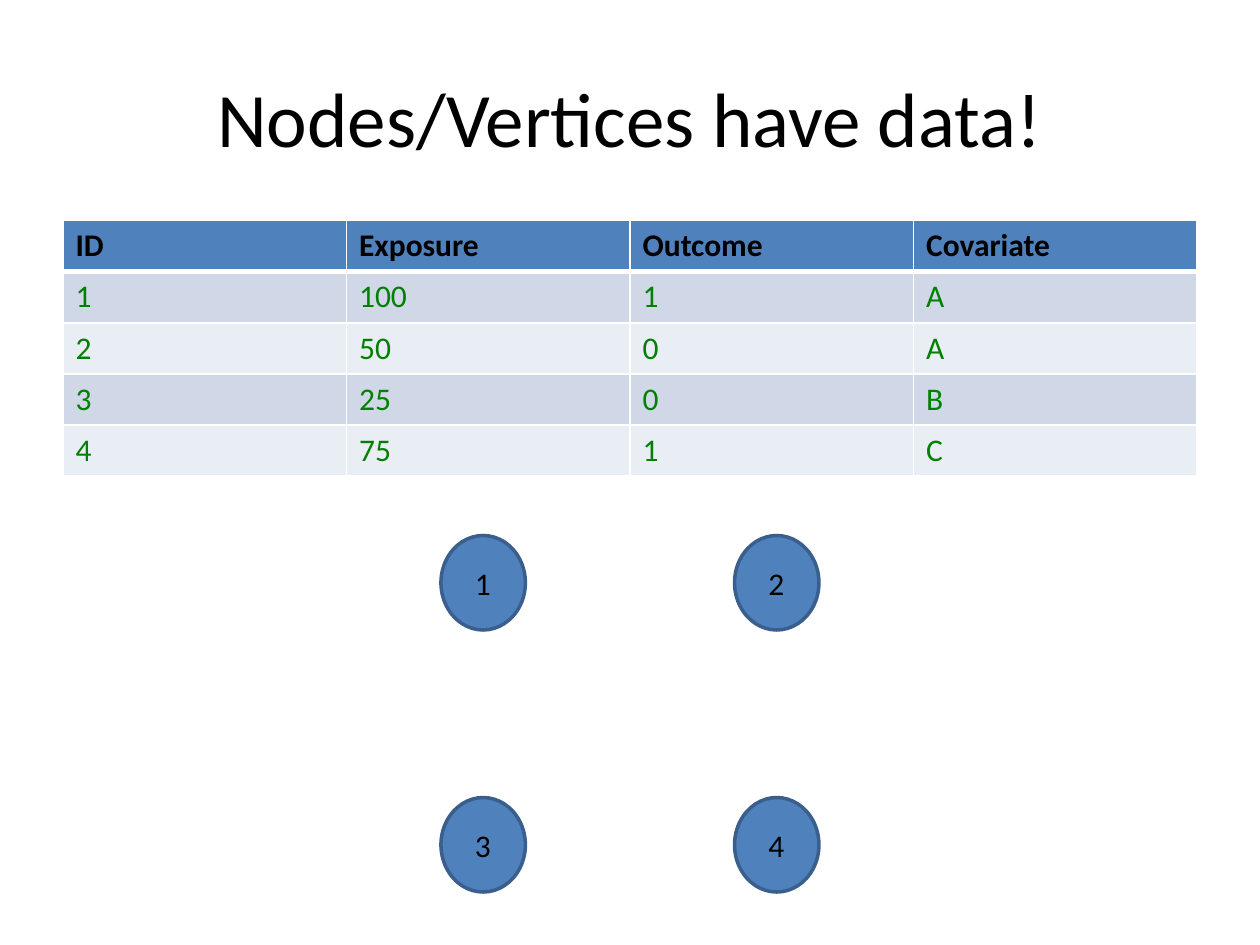
import lxml.etree
import pptx
import pptx.dml.color
import pptx.enum.shapes
import pptx.enum.text
import pptx.oxml.ns
import pptx.util
from pptx.util import Inches

BLACK, WHITE, GREEN, BLUE = "000000", "FFFFFF", "008000", "4F81BD"
OUTLINE = "3A5F8C"
BANDS = ["D0D8E8", "E9EDF4"]
RECORDS = [
    ["ID", "Exposure", "Outcome", "Covariate"],
    ["1", "100", "1", "A"],
    ["2", "50", "0", "A"],
    ["3", "25", "0", "B"],
    ["4", "75", "1", "C"],
]


def color(hex_string):
    """Return the RGB colour for a hex string."""
    return pptx.dml.color.RGBColor.from_string(hex_string)


def write(paragraph, words, size, ink, bold=False):
    """Add one formatted run to a paragraph."""
    run = paragraph.add_run()
    run.text = words
    run.font.name = "Calibri"
    run.font.size = pptx.util.Pt(size)
    run.font.bold = bold
    run.font.color.rgb = color(ink)


def add_label(slide, words, left, top, width, height, size):
    """Add a black text box and return its text frame."""
    label = slide.shapes.add_textbox(Inches(left), Inches(top), Inches(width), Inches(height))
    frame = label.text_frame
    frame.word_wrap = True
    write(frame.paragraphs[0], words, size, BLACK)
    return frame


def add_title(slide, words):
    """Add the centred slide title."""
    frame = add_label(slide, words, 0.5, 0.3, 9, 1.25, 44)
    frame.vertical_anchor = pptx.enum.text.MSO_ANCHOR.MIDDLE
    frame.paragraphs[0].alignment = pptx.enum.text.PP_ALIGN.CENTER


def add_borders(cell, widths):
    """Draw white cell borders from a mapping of side to point width."""
    qn = pptx.oxml.ns.qn
    properties = cell._tc.get_or_add_tcPr()
    for side, width in widths.items():
        border = lxml.etree.SubElement(properties, qn(f"a:ln{side}"), w=str(pptx.util.Pt(width)))
        fill = lxml.etree.SubElement(border, qn("a:solidFill"))
        lxml.etree.SubElement(fill, qn("a:srgbClr"), val=WHITE)


def add_data_table(slide, records):
    """Add the node table with a header row and banded records."""
    frame = slide.shapes.add_table(
        len(records), len(records[0]), Inches(0.5), Inches(1.75), Inches(9), Inches(2.03)
    )
    for row, record in enumerate(records):
        header = row == 0
        for column, words in enumerate(record):
            cell = frame.table.cell(row, column)
            add_borders(cell, {"L": 1, "R": 1, "T": 3 if row == 1 else 1, "B": 3 if header else 1})
            cell.fill.solid()
            cell.fill.fore_color.rgb = color(BLUE if header else BANDS[(row - 1) % 2])
            write(cell.text_frame.paragraphs[0], words, 18, BLACK if header else GREEN, header)


def add_node(slide, name, left, top):
    """Add a graph node with its number."""
    node = slide.shapes.add_shape(
        pptx.enum.shapes.MSO_SHAPE.OVAL, Inches(left), Inches(top), Inches(0.67), Inches(0.75)
    )
    node.shadow.inherit = False
    node.fill.solid()
    node.fill.fore_color.rgb = color(BLUE)
    node.line.color.rgb = color(OUTLINE)
    node.line.width = pptx.util.Pt(2)
    add_label(slide, name, left + 0.17, top + 0.18, 0.33, 0.4, 18)


def main():
    """Build and save the slide."""
    presentation = pptx.Presentation()
    presentation.slide_width, presentation.slide_height = Inches(10), Inches(7.5)
    slide = presentation.slides.add_slide(presentation.slide_layouts[6])
    add_title(slide, "Nodes/Vertices have data!")
    add_data_table(slide, RECORDS)
    for index, record in enumerate(RECORDS[1:]):
        row, column = divmod(index, 2)
        add_node(slide, record[0], 3.5 + 2.33 * column, 4.25 + 2.08 * row)
    presentation.save("out.pptx")


if __name__ == "__main__":
    main()
